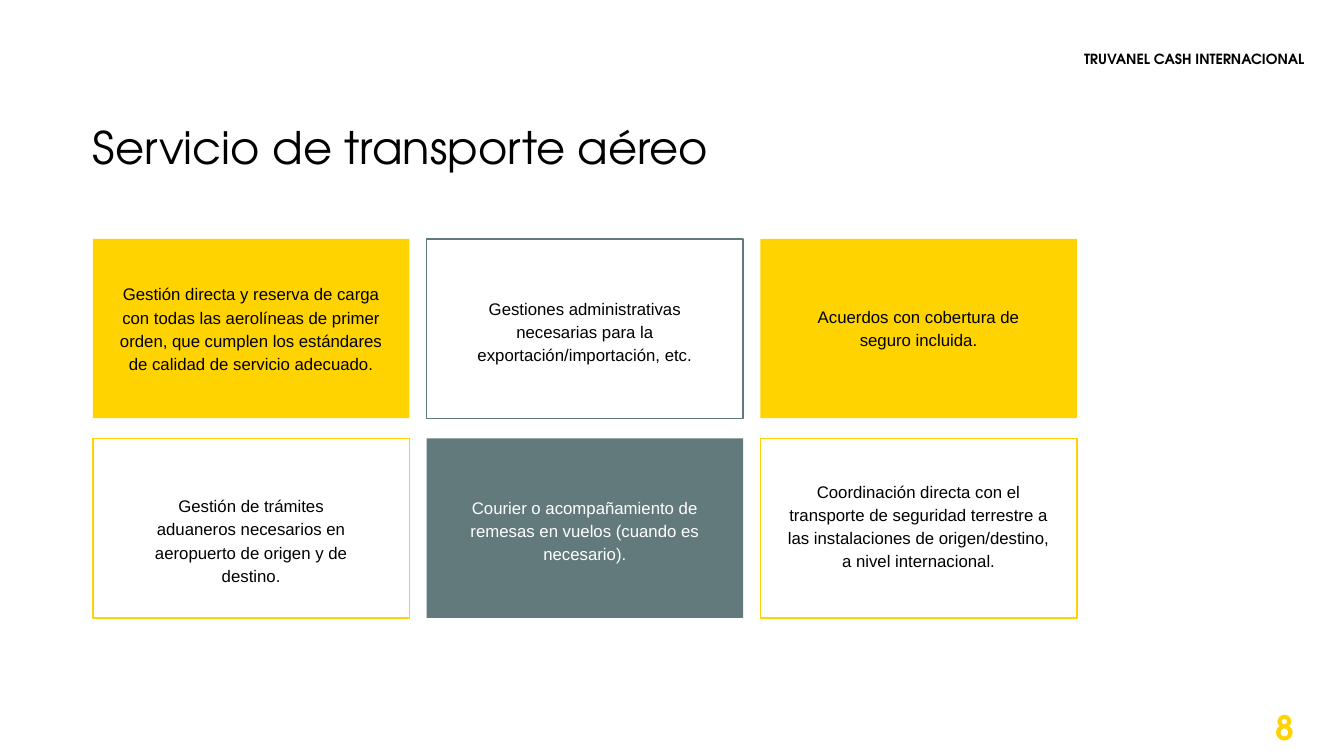
from pptx import Presentation
from pptx.dml.color import RGBColor
from pptx.enum.shapes import MSO_SHAPE
from pptx.enum.text import MSO_ANCHOR, MSO_AUTO_SIZE, PP_ALIGN
from pptx.util import Cm, Pt

COLORS = {"yellow": "FFD300", "slate": "637A7C", "black": "000000", "white": "FFFFFF"}
HEADING_FONT = "TeX Gyre Adventor"
BODY_FONT = "Arial"

CARD_WIDTH, CARD_HEIGHT = 7.98, 4.52
GRID_LEFT, GRID_TOP = 2.34, 6.02
COLUMN_STEP, ROW_STEP = 8.41, 5.03
COLUMNS = 3

CARDS = [
    ("Gestión directa y reserva de carga con todas las aerolíneas de primer orden, "
     "que cumplen los estándares de calidad de servicio adecuado.",
     "yellow", None, "black", 6.71, 2.39),
    ("Gestiones administrativas necesarias para la exportación/importación, etc.",
     None, "slate", "black", 6.45, 1.65),
    ("Acuerdos con cobertura de seguro incluida.",
     "yellow", None, "black", 5.61, 1.27),
    ("Gestión de trámites aduaneros necesarios en aeropuerto de origen y de destino.",
     None, "yellow", "black", 5.77, 1.78),
    ("Courier o acompañamiento de remesas en vuelos (cuando es necesario).",
     "slate", None, "white", 6.53, 1.68),
    ("Coordinación directa con el transporte de seguridad terrestre a las instalaciones "
     "de origen/destino, a nivel internacional.",
     None, "yellow", "black", 6.76, 2.51),
]


def rgb(name):
    return RGBColor.from_string(COLORS[name])


def write_text(shape, text, size=12, font=BODY_FONT, color="black", bold=False,
               align=PP_ALIGN.LEFT, spacing=1.0, inset=0, anchor=MSO_ANCHOR.TOP):
    frame = shape.text_frame
    frame.word_wrap = True
    frame.auto_size = MSO_AUTO_SIZE.NONE
    frame.vertical_anchor = anchor
    frame.margin_left = frame.margin_right = Cm(inset)
    frame.margin_top = frame.margin_bottom = Cm(0)
    paragraph = frame.paragraphs[0]
    paragraph.alignment = align
    paragraph.line_spacing = spacing
    run = paragraph.add_run()
    run.text = text
    run.font.size = Pt(size)
    run.font.name = font
    run.font.bold = bold
    run.font.color.rgb = rgb(color)


class SlideBuilder:
    def __init__(self, presentation):
        self.slide = presentation.slides.add_slide(presentation.slide_layouts[5])

    def title(self, text, left, top, width, height, **style):
        shape = self.slide.shapes.title
        shape.left, shape.top = Cm(left), Cm(top)
        shape.width, shape.height = Cm(width), Cm(height)
        write_text(shape, text, **style)

    def text(self, text, left, top, width, height, **style):
        shape = self.slide.shapes.add_textbox(Cm(left), Cm(top), Cm(width), Cm(height))
        write_text(shape, text, **style)

    def rectangle(self, left, top, width, height, fill=None, line=None):
        shape = self.slide.shapes.add_shape(
            MSO_SHAPE.RECTANGLE, Cm(left), Cm(top), Cm(width), Cm(height))
        shape.shadow.inherit = False
        if fill:
            shape.fill.solid()
            shape.fill.fore_color.rgb = rgb(fill)
        else:
            shape.fill.background()
        if line:
            shape.line.color.rgb = rgb(line)
            shape.line.width = Pt(1)
        else:
            shape.line.fill.background()

    def card(self, index, text, fill, line, color, text_width, text_height):
        row, column = divmod(index, COLUMNS)
        left = GRID_LEFT + column * COLUMN_STEP
        top = GRID_TOP + row * ROW_STEP
        self.rectangle(left, top, CARD_WIDTH, CARD_HEIGHT, fill, line)
        self.text(text, left + (CARD_WIDTH - text_width) / 2,
                  top + (CARD_HEIGHT - text_height) / 2, text_width, text_height,
                  color=color, align=PP_ALIGN.CENTER, spacing=1.15)


def main():
    presentation = Presentation()
    presentation.slide_width, presentation.slide_height = Cm(33.87), Cm(19.05)
    builder = SlideBuilder(presentation)
    builder.title("Servicio de transporte aéreo", GRID_LEFT, 3.18, 18.75, 1.35,
                  size=32, font=HEADING_FONT, spacing=0.9)
    builder.text("TRUVANEL CASH INTERNACIONAL", 7.62, 1.32, 25.25, 0.38, size=10,
                 font=HEADING_FONT, bold=True, align=PP_ALIGN.RIGHT, spacing=0.9)
    for index, card in enumerate(CARDS):
        builder.card(index, *card)
    builder.text("8", 30.33, 17.93, 2.54, 0.76, size=24, font=HEADING_FONT,
                 color="yellow", bold=True, align=PP_ALIGN.RIGHT, inset=0.25,
                 anchor=MSO_ANCHOR.MIDDLE)
    presentation.save("out.pptx")


if __name__ == "__main__":
    main()
